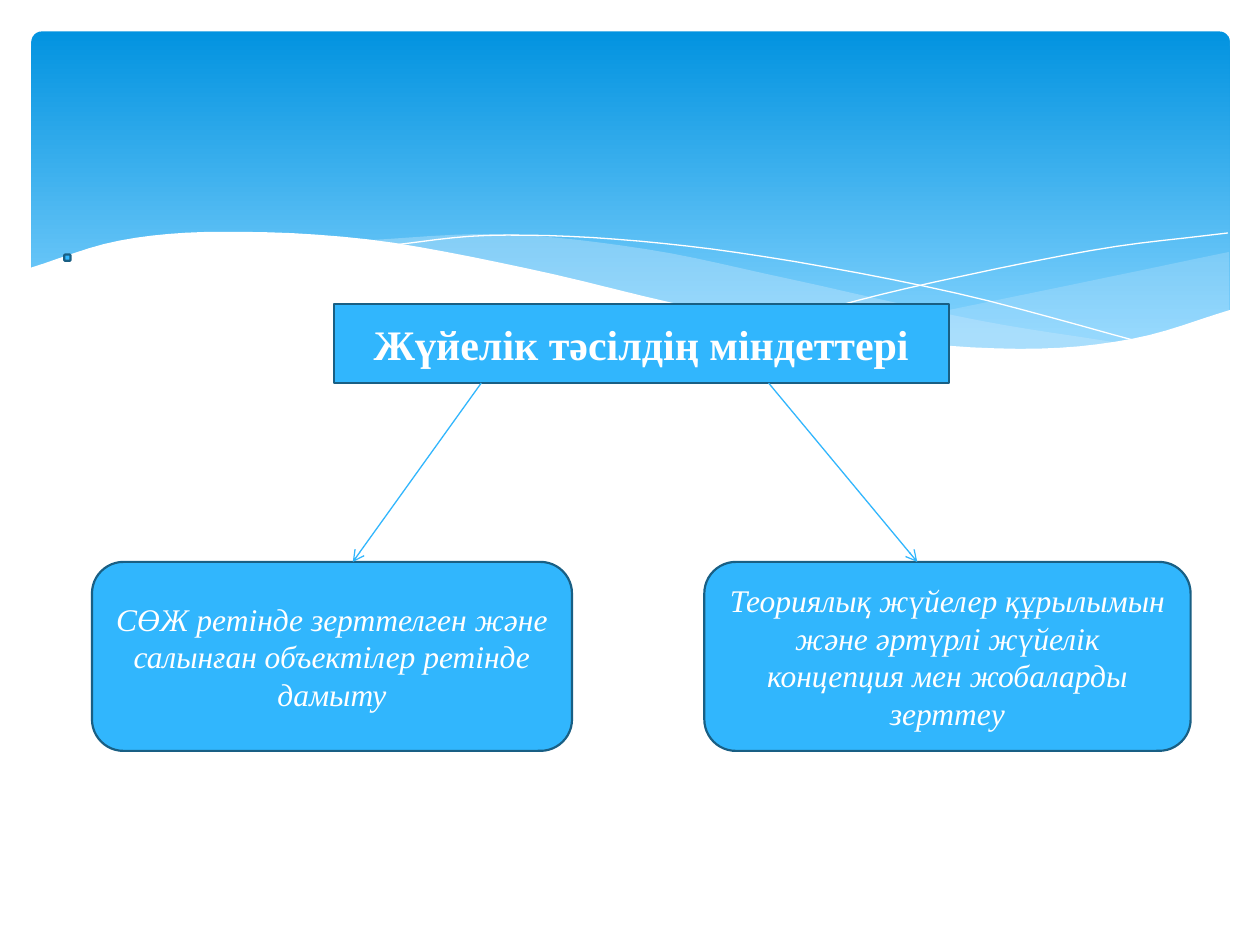
from dataclasses import dataclass
from typing import Any, Optional

from lxml import etree
from pptx import Presentation
from pptx.dml.color import RGBColor
from pptx.enum.shapes import MSO_CONNECTOR, MSO_SHAPE
from pptx.enum.text import MSO_ANCHOR, MSO_AUTO_SIZE, PP_ALIGN
from pptx.oxml.ns import qn
from pptx.util import Inches, Pt

ROUND = MSO_SHAPE.ROUNDED_RECTANGLE
STRAIGHT = MSO_CONNECTOR.STRAIGHT
MIDDLE = MSO_ANCHOR.MIDDLE
FIXED = MSO_AUTO_SIZE.NONE
CENTER = PP_ALIGN.CENTER

Point = tuple[float, float]


@dataclass(frozen=True)
class Theme:
    font: str = "Times New Roman"
    head: int = 24
    body: int = 18
    white: str = "FFFFFF"
    blue: str = "31B6FD"
    edge: str = "195F84"
    top: str = "0293E0"
    low: str = "83D3FE"
    pale: str = "C6E7FC"
    border: float = 1.25
    arrow: float = 0.75


@dataclass(frozen=True)
class Box:
    left: float
    top: float
    width: float
    height: float
    text: str = ""


@dataclass(frozen=True)
class Arrow:
    start: Point
    end: Point


@dataclass(frozen=True)
class Wave:
    crest: tuple[Point, ...]
    base: tuple[Point, ...] = ()
    fill: Optional[str] = None
    alpha: int = 100


THEME = Theme()
BANNER = Box(0.25, 0.25, 9.51, 2.7)
HEAD = Box(2.65, 2.41, 4.88, 0.63, "Жүйелік тәсілдің міндеттері")
DOT = Box(0.51, 2.02, 0.05, 0.05)
TASKS = (
    Box(0.73, 4.46, 3.81, 1.5,
        "СӨЖ ретінде зерттелген және салынған объектілер ретінде дамыту"),
    Box(5.59, 4.46, 3.86, 1.5,
        "Теориялық жүйелер құрылымын және әртүрлі жүйелік концепция мен жобаларды зерттеу"),
)
ARROWS = (
    Arrow((3.82, 3.04), (2.8, 4.46)),
    Arrow((6.1, 3.04), (7.28, 4.46)),
)
SCALE = Inches(1) // 1000
STEPS = 6
WAVES = (
    Wave(((9.76, 2), (8.32, 2.3), (6.61, 2.65)),
         ((6.61, 2.65), (7.45, 2.75), (8.14, 2.78), (8.89, 2.72), (9.76, 2.47)),
         THEME.pale, 29),
    Wave(((8.93, 2.73), (7.75, 2.54), (6.29, 2.22), (5.14, 1.98), (3.99, 1.86), (2.86, 1.91)),
         ((2.86, 1.91), (3.83, 2.07), (4.91, 2.32), (6.18, 2.58), (7.36, 2.75), (8.18, 2.78),
          (8.93, 2.73)),
         THEME.pale, 40),
    Wave(((3.09, 1.95), (3.87, 1.87), (4.89, 1.9), (6.08, 2.04), (7.6, 2.33), (9.07, 2.72))),
    Wave(((6.13, 2.57), (7.2, 2.29), (8.66, 1.99), (9.75, 1.85))),
    Wave(((9.77, 2.46), (8.99, 2.69), (8.09, 2.77), (6.88, 2.68), (5.55, 2.45), (4.18, 2.13),
          (2.92, 1.9), (1.77, 1.84), (0.95, 1.91), (0.23, 2.13)),
         ((0.23, 3.29), (9.77, 3.29)), THEME.white),
)


def blend(a: float, b: float, c: float, d: float, t: float) -> float:
    return b + t / 2 * (c - a + t * (2 * a - 5 * b + 4 * c - d + t * (3 * (b - c) + d - a)))


def mirror(far: Point, mid: Point) -> Point:
    return 2 * mid[0] - far[0], 2 * mid[1] - far[1]


def smooth(knots: tuple[Point, ...]) -> list[Point]:
    if not knots:
        return []
    chain = (mirror(knots[1], knots[0]), *knots, mirror(knots[-2], knots[-1]))
    curve = [
        tuple(1000 * blend(*axis, step / STEPS) for axis in zip(*chain[i:i + 4]))
        for i in range(len(knots) - 1)
        for step in range(STEPS)
    ]
    return curve + [tuple(1000 * value for value in knots[-1])]


def paint(item: Any, color: str) -> None:
    item.fill.solid()
    item.fill.fore_color.rgb = RGBColor.from_string(color)


def stroke(item: Any, color: str, width: float) -> None:
    item.line.color.rgb = RGBColor.from_string(color)
    item.line.width = Pt(width)


def place(item: Any, box: Box) -> None:
    item.left, item.top = Inches(box.left), Inches(box.top)
    item.width, item.height = Inches(box.width), Inches(box.height)


def add_round(slide: Any, box: Box) -> Any:
    item = slide.shapes.add_shape(ROUND, 0, 0, 0, 0)
    place(item, box)
    item.shadow.inherit = False
    return item


def style(item: Any) -> None:
    paint(item, THEME.blue)
    stroke(item, THEME.edge, THEME.border)


def write(item: Any, text: str, size: int, bold: bool, slant: bool) -> None:
    frame = item.text_frame
    frame.word_wrap = True
    frame.auto_size = FIXED
    frame.vertical_anchor = MIDDLE
    para = frame.paragraphs[0]
    para.alignment = CENTER
    run = para.add_run()
    run.text = text
    font = run.font
    font.name, font.size = THEME.font, Pt(size)
    font.bold, font.italic = bold, slant
    font.color.rgb = RGBColor.from_string(THEME.white)


def add_banner(slide: Any) -> None:
    item = add_round(slide, BANNER)
    item.adjustments[0] = 0.03
    item.line.fill.background()
    item.fill.gradient()
    item.fill.gradient_angle = 270
    for stop, color, spot in zip(item.fill.gradient_stops, (THEME.top, THEME.low), (0, 0.9)):
        stop.color.rgb = RGBColor.from_string(color)
        stop.position = spot


def add_wave(slide: Any, wave: Wave) -> None:
    first, *rest = smooth(wave.crest) + smooth(wave.base)
    pen = slide.shapes.build_freeform(*first, scale=SCALE)
    pen.add_line_segments(rest, close=wave.fill is not None)
    item = pen.convert_to_shape()
    item.shadow.inherit = False
    if wave.fill is None:
        item.fill.background()
        stroke(item, THEME.white, 0)
        return
    paint(item, wave.fill)
    item.line.fill.background()
    if wave.alpha < 100:
        color = item._element.spPr.find(qn("a:solidFill"))[0]
        etree.SubElement(color, qn("a:alpha"), val=str(wave.alpha * 1000))


def add_head(slide: Any) -> None:
    title = slide.shapes.title
    place(title, HEAD)
    shape = etree.Element(qn("a:prstGeom"), prst="roundRect")
    etree.SubElement(shape, qn("a:avLst"))
    title._element.spPr.find(qn("a:xfrm")).addnext(shape)
    style(title)
    write(title, HEAD.text, THEME.head, True, False)
    slide.shapes._spTree.append(title._element)


def add_task(slide: Any, box: Box) -> None:
    item = add_round(slide, box)
    style(item)
    write(item, box.text, THEME.body, False, True)


def add_arrow(slide: Any, arrow: Arrow) -> None:
    ends = [Inches(value) for value in arrow.start + arrow.end]
    item = slide.shapes.add_connector(STRAIGHT, *ends)
    stroke(item, THEME.blue, THEME.arrow)
    etree.SubElement(item.line._get_or_add_ln(), qn("a:tailEnd"), type="arrow")
    etree.SubElement(item._element.spPr, qn("a:effectLst"))


def main() -> None:
    deck = Presentation()
    deck.slide_width, deck.slide_height = Inches(10), Inches(7.5)
    slide = deck.slides.add_slide(deck.slide_layouts[5])
    add_banner(slide)
    for wave in WAVES:
        add_wave(slide, wave)
    add_head(slide)
    style(add_round(slide, DOT))
    for task in TASKS:
        add_task(slide, task)
    for arrow in ARROWS:
        add_arrow(slide, arrow)
    deck.save("out.pptx")


if __name__ == "__main__":
    main()
